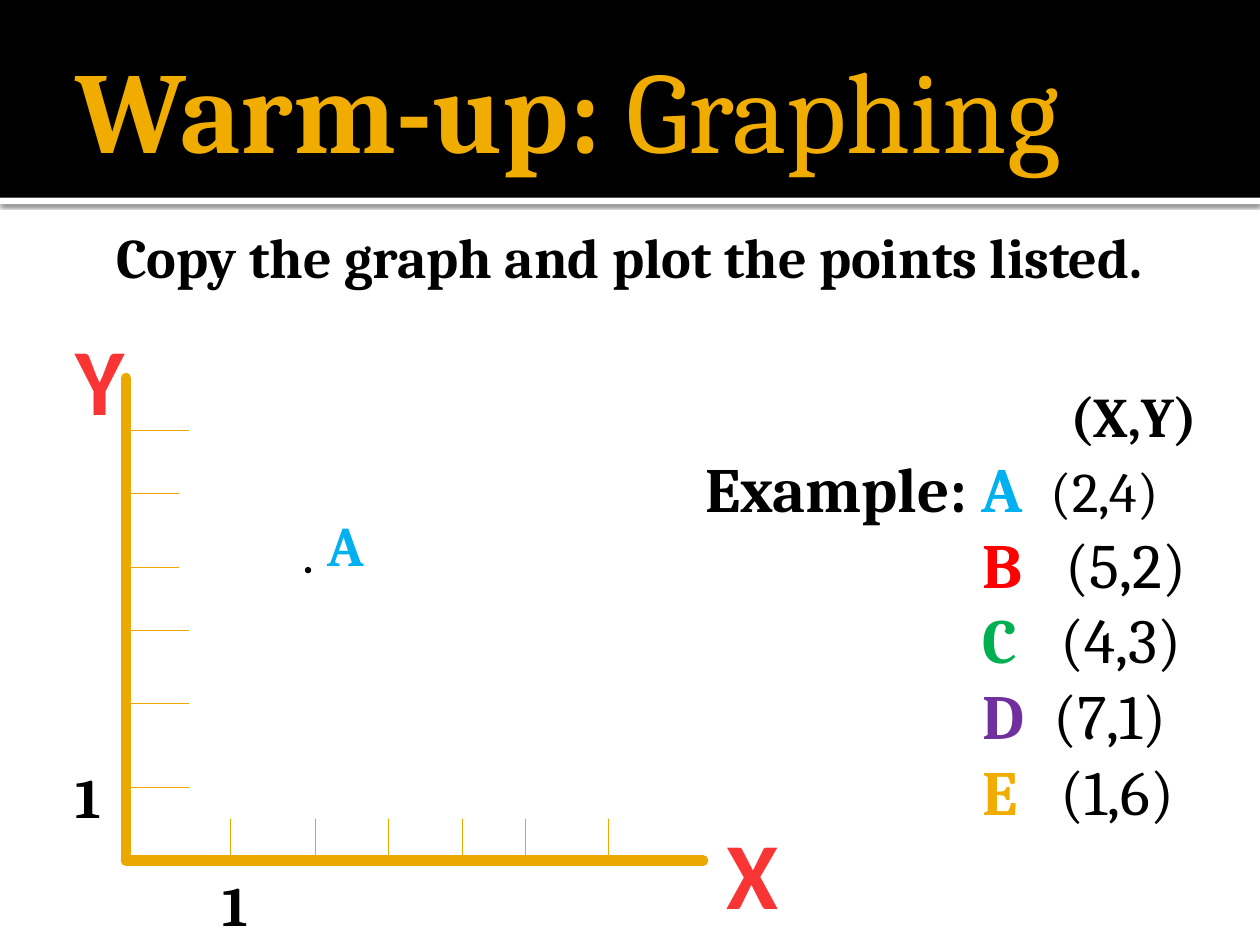
from lxml import etree
from pptx import Presentation
from pptx.dml.color import RGBColor
from pptx.enum.shapes import MSO_CONNECTOR, MSO_SHAPE
from pptx.enum.text import MSO_ANCHOR, PP_ALIGN
from pptx.oxml.ns import qn
from pptx.util import Inches, Pt

LEFT, CENTER = PP_ALIGN.LEFT, PP_ALIGN.CENTER
TOP, MIDDLE = MSO_ANCHOR.TOP, MSO_ANCHOR.MIDDLE
STRAIGHT = MSO_CONNECTOR.STRAIGHT
RECTANGLE, OVAL = MSO_SHAPE.RECTANGLE, MSO_SHAPE.OVAL

BLACK = RGBColor(0x00, 0x00, 0x00)
WHITE = RGBColor(0xFF, 0xFF, 0xFF)
GOLD = RGBColor(0xF0, 0xAD, 0x00)
AXIS_GOLD = RGBColor(0xEB, 0xA9, 0x00)
AXIS_RED = RGBColor(0xF8, 0x35, 0x34)
BLUE = RGBColor(0x00, 0xB0, 0xF0)
RED = RGBColor(0xFF, 0x00, 0x00)
GREEN = RGBColor(0x00, 0xB0, 0x50)
PURPLE = RGBColor(0x70, 0x30, 0xA0)

TITLE = [("Warm-up:", {"size": 66, "color": GOLD}),
         (" Graphing", {"size": 66, "color": GOLD, "bold": False})]
INSTRUCTION = [("Copy the graph and plot the points listed.", {})]

# text, place, format, alignment
LABELS = [
    ("X", (5.67, 6.42, 0.5, 1.01), {"size": 54, "name": "Calibri", "color": AXIS_RED}, CENTER),
    ("Y", (0.5, 2.5, 0.5, 1.01), {"size": 54, "name": "Calibri", "color": AXIS_RED}, CENTER),
    ("A", (2.5, 4, 0.67, 0.64), {"color": BLUE}, LEFT),
    ("1", (0.5, 6, 0.33, 0.64), {}, LEFT),
    ("1", (1.67, 6.86, 0.42, 0.64), {}, LEFT),
]

# lead-in, letter, letter colour, coordinates, size and tab stop of the coordinates
LETTER_TAB = 2.2
POINTS = [
    ("Example: ", "A", BLUE, "(2,4)", 32, 2.74),
    ("\t", "B", RED, "(5,2)", 36, 2.86),
    ("\t", "C", GREEN, "(4,3)", 36, 2.82),
    ("\t", "D", PURPLE, "(7,1)", 36, 2.76),
    ("\t", "E", GOLD, "(1,6)", 36, 2.82),
]
HEADING_TAB = 2.9

ORIGIN_X, ORIGIN_Y = 1, 6.83
AXIS_ENDS = [(ORIGIN_X, 3), (5.58, ORIGIN_Y)]
Y_TICKS = [(6.25, 0.5), (5.58, 0.5), (5, 0.5), (4.5, 0.42), (3.92, 0.42), (3.42, 0.5)]
X_TICKS = [1.83, 2.5, 3.08, 3.67, 4.17, 4.83]
X_TICK_TOP = 6.5


def add_solid(page, kind, place, color):
    shape = page.shapes.add_shape(kind, *map(Inches, place))
    shape.shadow.inherit = False
    shape.fill.solid()
    shape.fill.fore_color.rgb = color
    shape.line.fill.background()
    return shape


def add_drop_shadow(shape):
    effects = shape._element.spPr.find(qn("a:effectLst"))
    shadow = etree.SubElement(effects, qn("a:outerShdw"), blurRad=str(Pt(2.5)),
                              dist=str(Pt(0.8)), dir="5400000", rotWithShape="0")
    color = etree.SubElement(shadow, qn("a:srgbClr"), val="000000")
    etree.SubElement(color, qn("a:alpha"), val="60000")


def add_line(page, start, end, width):
    line = page.shapes.add_connector(STRAIGHT, *map(Inches, start + end))
    line.line.color.rgb = AXIS_GOLD
    line.line.width = Pt(width)
    properties = line._element.spPr
    properties.find(qn("a:ln")).set("cap", "rnd")
    etree.SubElement(properties, qn("a:effectLst"))


def write_spans(para, spans):
    for text, changes in spans:
        look = {"name": "Cambria", "size": 32, "bold": True, "color": BLACK} | changes
        span = para.add_run()
        span.text = text
        span.font.color.rgb = look.pop("color")
        look["size"] = Pt(look["size"])
        for key, value in look.items():
            setattr(span.font, key, value)


def set_tabs(para, stops):
    tabs = etree.SubElement(para._p.get_or_add_pPr(), qn("a:tabLst"))
    for stop in stops:
        etree.SubElement(tabs, qn("a:tab"), pos=str(Inches(stop)), algn="l")


def add_text(page, place, paragraphs, align=LEFT, anchor=TOP, margins=(0.1, 0.05, 0.1, 0.05)):
    """Add a text box; each paragraph is a pair of spans and tab stops."""
    frame = page.shapes.add_textbox(*map(Inches, place)).text_frame
    frame.word_wrap = True
    frame.vertical_anchor = anchor
    for side, margin in zip(("left", "top", "right", "bottom"), margins):
        setattr(frame, f"margin_{side}", Inches(margin))
    for number, (spans, stops) in enumerate(paragraphs):
        para = frame.add_paragraph() if number else frame.paragraphs[0]
        para.alignment = align
        if stops:
            set_tabs(para, stops)
        write_spans(para, spans)


def add_graph(page):
    for end in AXIS_ENDS:
        add_line(page, (ORIGIN_X, ORIGIN_Y), end, 6)
    for y, length in Y_TICKS:
        add_line(page, (ORIGIN_X, y), (ORIGIN_X + length, y), 0.5)
    for x in X_TICKS:
        add_line(page, (x, X_TICK_TOP), (x, ORIGIN_Y), 0.5)
    add_solid(page, OVAL, (2.42, 4.5, 0.05, 0.05), BLACK)
    for text, place, look, align in LABELS:
        add_text(page, place, [([(text, look)], [])], align)


def add_point_list(page):
    rows = [([("\t", {"size": 36}), ("(X,Y)", {})], [HEADING_TAB])]
    for lead, letter, color, coordinates, size, stop in POINTS:
        spans = [(lead, {"size": 36}),
                 (letter, {"size": 36, "color": color}),
                 ("\t" + coordinates, {"size": size, "bold": False})]
        rows.append((spans, [LETTER_TAB, stop] if lead == "\t" else [stop]))
    add_text(page, (5.5, 2.92, 4.92, 3.74), rows)


def main():
    deck = Presentation()
    deck.slide_width, deck.slide_height = Inches(10), Inches(7.5)
    page = deck.slides.add_slide(deck.slide_layouts[6])
    add_drop_shadow(add_solid(page, RECTANGLE, (0, 1.57, 10, 0.05), WHITE))
    add_solid(page, RECTANGLE, (0, 0, 10, 1.57), BLACK)
    add_text(page, (0.5, 0.17, 9, 1.37), [(TITLE, [])], anchor=MIDDLE,
             margins=(0.1, 0.05, 0.05, 0.05))
    add_text(page, (0.5, 1.67, 9, 5.33), [(INSTRUCTION, [])], CENTER,
             margins=(0.1, 0.1, 0.1, 0.05))
    add_graph(page)
    add_point_list(page)
    deck.save("out.pptx")


if __name__ == "__main__":
    main()
